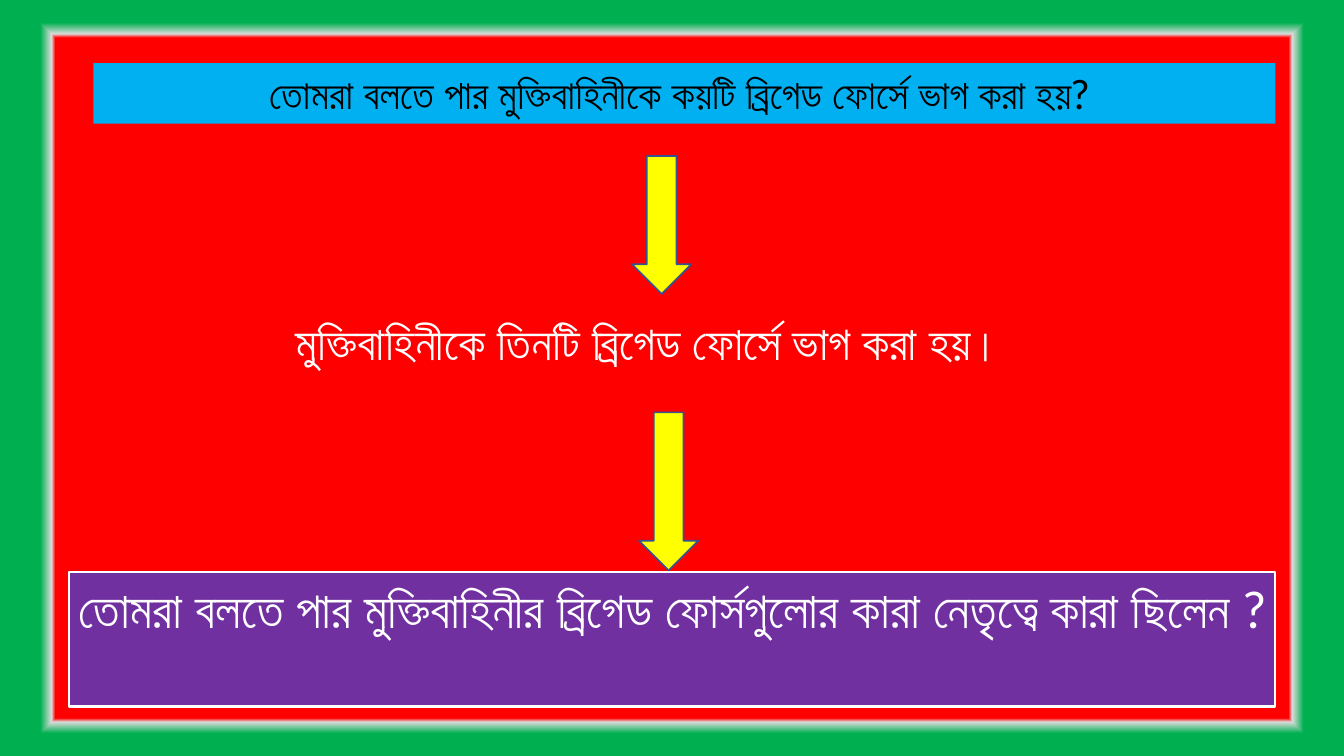
from dataclasses import dataclass
from typing import Optional

from lxml import etree
from pptx import Presentation
from pptx.dml.color import RGBColor
from pptx.enum.lang import MSO_LANGUAGE_ID
from pptx.enum.shapes import MSO_SHAPE
from pptx.enum.text import MSO_ANCHOR, MSO_AUTO_SIZE, PP_ALIGN
from pptx.oxml.ns import qn
from pptx.util import Inches, Pt

RECTANGLE, DOWN_ARROW = MSO_SHAPE.RECTANGLE, MSO_SHAPE.DOWN_ARROW
TOP, CENTER, NO_FIT = MSO_ANCHOR.TOP, PP_ALIGN.CENTER, MSO_AUTO_SIZE.NONE
BENGALI = MSO_LANGUAGE_ID.BENGALI
SLIDE_WIDTH, SLIDE_HEIGHT = Inches(11.11), Inches(6.25)


@dataclass(frozen=True)
class Theme:
    font: str = "Lato"
    red: str = "FF0000"
    silver: str = "DBDBDB"
    green: str = "00B050"
    sky: str = "00B0F0"
    purple: str = "7030A0"
    yellow: str = "FFFF00"
    outline: str = "325491"
    black: str = "000000"
    white: str = "FFFFFF"
    title_size: int = 24
    answer_size: int = 28
    question_size: int = 30


THEME = Theme()


@dataclass(frozen=True)
class Area:
    """Place in percent of the slide's width and height."""
    left: float
    top: float
    width: float
    height: float

    def box(self) -> tuple[int, int, int, int]:
        return (int(SLIDE_WIDTH * self.left / 100), int(SLIDE_HEIGHT * self.top / 100),
                int(SLIDE_WIDTH * self.width / 100), int(SLIDE_HEIGHT * self.height / 100))


@dataclass(frozen=True)
class Banner:
    area: Area
    text: str
    size: int
    color: str
    fill: str
    border: Optional[str] = None
    side_margin: float = 0.1


TITLE = Banner(Area(6.95, 8.35, 87.94, 8),
               "তোমরা বলতে পার মুক্তিবাহিনীকে কয়টি ব্রিগেড ফোর্সে ভাগ করা হয়? ",
               THEME.title_size, THEME.black, THEME.sky)
ANSWER = Banner(Area(11.34, 40.64, 74.8, 9.12),
                "মুক্তিবাহিনীকে তিনটি ব্রিগেড ফোর্সে ভাগ করা হয়। ",
                THEME.answer_size, THEME.white, THEME.red)
NEXT_QUESTION = Banner(Area(5.13, 75.68, 89.74, 17.76),
                       "তোমরা বলতে পার মুক্তিবাহিনীর ব্রিগেড ফোর্সগুলোর কারা নেতৃত্বে কারা ছিলেন ?",
                       THEME.question_size, THEME.white, THEME.purple, THEME.white, 0.04)
ARROWS = [Area(47.03, 20.64, 4.41, 18.24), Area(47.55, 54.56, 4.41, 20.9)]
FRAME_STOPS = [(9, THEME.red), (90, THEME.red), (91, THEME.silver),
               (94, THEME.green), (100, THEME.green)]


def paint_background(slide) -> None:
    slide.background.fill.gradient()
    gradient = next(slide.element.iter(qn("a:gradFill")))
    for part in list(gradient):
        gradient.remove(part)
    stops = etree.SubElement(gradient, qn("a:gsLst"))
    for percent, color in FRAME_STOPS:
        stop = etree.SubElement(stops, qn("a:gs"), pos=str(percent * 1000))
        etree.SubElement(stop, qn("a:srgbClr"), val=color)
    rings = etree.SubElement(gradient, qn("a:path"))
    rings.set("path", "rect")
    etree.SubElement(rings, qn("a:fillToRect"), l="50000", t="50000", r="50000", b="50000")


def paint(shape, fill: str, border: Optional[str], width: float) -> None:
    shape.fill.solid()
    shape.fill.fore_color.rgb = RGBColor.from_string(fill)
    if border is None:
        shape.line.fill.background()
    else:
        shape.line.color.rgb = RGBColor.from_string(border)
        shape.line.width = Pt(width)


def dress_banner(shape, banner: Banner) -> None:
    shape.left, shape.top, shape.width, shape.height = banner.area.box()
    paint(shape, banner.fill, banner.border, 1.5)
    frame = shape.text_frame
    frame.text = banner.text
    frame.word_wrap, frame.auto_size, frame.vertical_anchor = True, NO_FIT, TOP
    frame.margin_left = frame.margin_right = Inches(banner.side_margin)
    line = frame.paragraphs[0]
    line.alignment = CENTER
    for run in line.runs:
        run.font.name, run.font.size = THEME.font, Pt(banner.size)
        run.font.language_id = BENGALI
        run.font.color.rgb = RGBColor.from_string(banner.color)
        # Bengali takes the complex-script typeface
        etree.SubElement(run.font._element, qn("a:cs"), typeface=THEME.font)


def add_shape(slide, kind, area: Area):
    shape = slide.shapes.add_shape(kind, *area.box())
    shape.shadow.inherit = False
    return shape


def main() -> None:
    deck = Presentation()
    deck.slide_width, deck.slide_height = SLIDE_WIDTH, SLIDE_HEIGHT
    slide = deck.slides.add_slide(deck.slide_layouts[5])
    paint_background(slide)

    # Arrows between the steps
    for area in ARROWS:
        paint(add_shape(slide, DOWN_ARROW, area), THEME.yellow, THEME.outline, 1)

    # Question, answer, next question
    dress_banner(slide.shapes.title, TITLE)
    for banner in (ANSWER, NEXT_QUESTION):
        dress_banner(add_shape(slide, RECTANGLE, banner.area), banner)

    deck.save("out.pptx")


if __name__ == "__main__":
    main()
